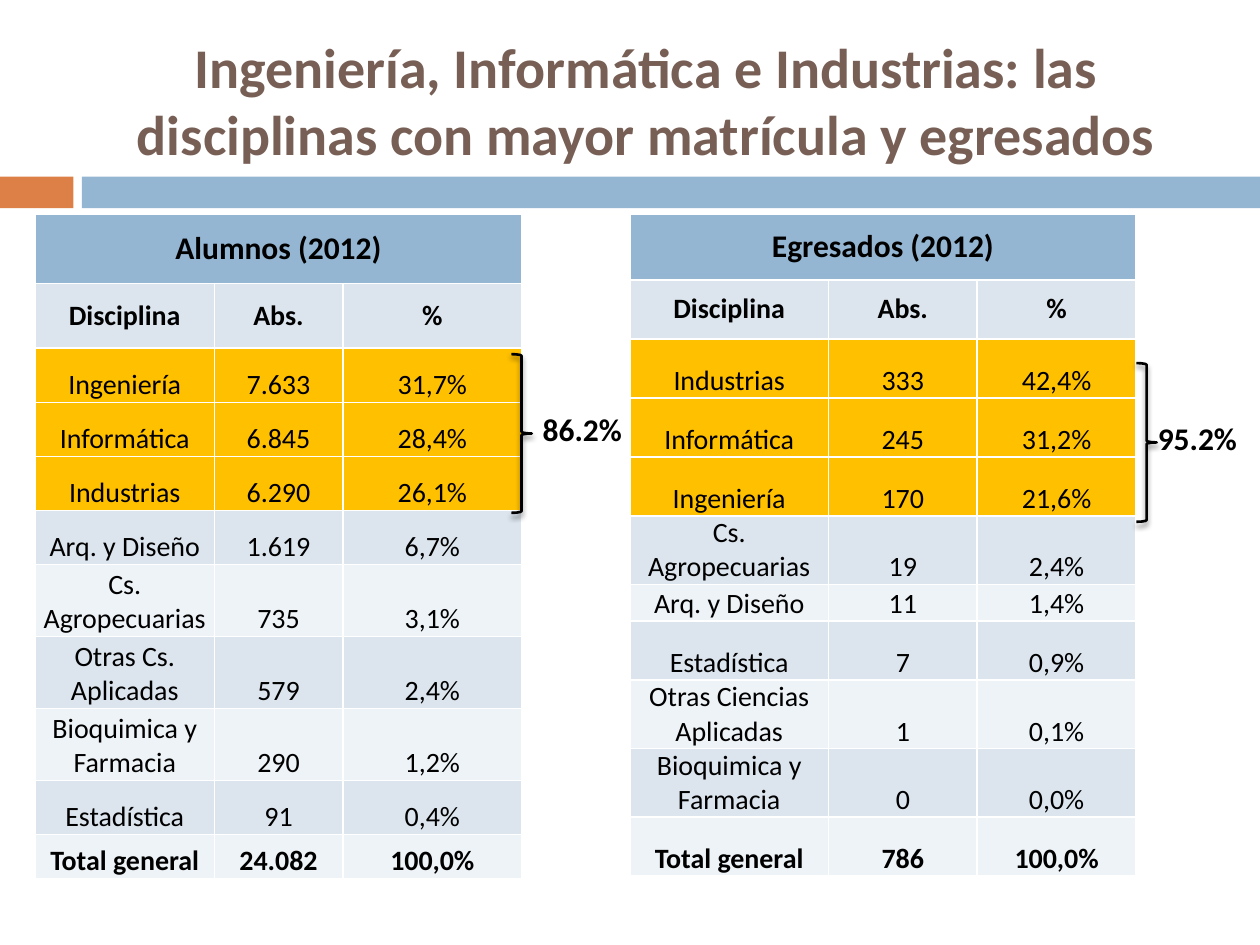
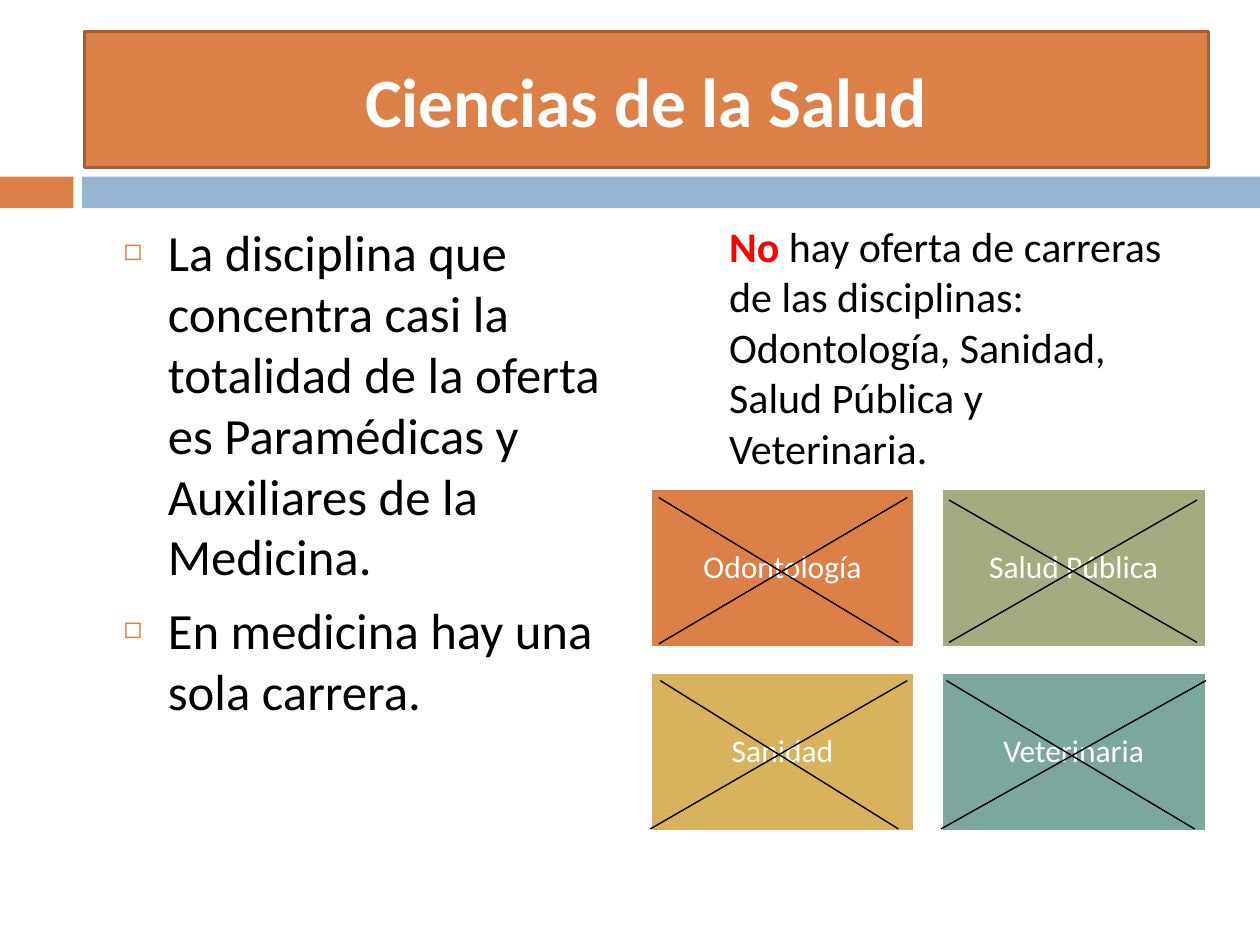
from lxml.etree import SubElement
from pptx import Presentation
from pptx.dml.color import RGBColor
from pptx.enum.shapes import MSO_CONNECTOR as Line, MSO_SHAPE as Shape
from pptx.enum.text import MSO_ANCHOR as Anchor, MSO_AUTO_SIZE as Fit, PP_ALIGN as Align
from pptx.oxml.ns import qn
from pptx.util import Cm, Pt

BLACK = RGBColor(0x00, 0x00, 0x00)
WHITE = RGBColor(0xFF, 0xFF, 0xFF)
RED = RGBColor(0xFF, 0x00, 0x00)
BROWN = RGBColor(0x77, 0x5F, 0x55)
RUST = RGBColor(0xA3, 0x5F, 0x35)
ORANGE = RGBColor(0xDD, 0x80, 0x47)
BLUE = RGBColor(0x94, 0xB6, 0xD2)
PALE = RGBColor(0xDC, 0xE5, 0xEE)
FAINT = RGBColor(0xEE, 0xF3, 0xF7)
AMBER = RGBColor(0xFF, 0xC0, 0x00)
GREEN = RGBColor(0xA5, 0xAB, 0x81)
GOLD = RGBColor(0xD8, 0xB2, 0x5C)
TEAL = RGBColor(0x7B, 0xA7, 0x9D)


def write(para, text, size=18, color=BLACK, bold=False, align=None):
    """Add one formatted run to a paragraph."""
    run = para.add_run()
    run.text = text
    run.font.name = "Calibri"
    run.font.size = Pt(size)
    run.font.bold = bold
    run.font.color.rgb = color
    if align is not None:
        para.alignment = align


def place(shape, left, top, width, height):
    shape.left, shape.top = Cm(left), Cm(top)
    shape.width, shape.height = Cm(width), Cm(height)


prs = Presentation()
prs.slide_width, prs.slide_height = Cm(25.4), Cm(19.05)
first = prs.slides.add_slide(prs.slide_layouts[5])
health = prs.slides.add_slide(prs.slide_layouts[1])

# Bands, kept on the master for every slide
tree = prs.slide_master.shapes.element
for left, width, color in [(0, 1.48, ORANGE), (1.65, 23.75, BLUE)]:
    band = first.shapes.add_shape(Shape.RECTANGLE, Cm(left), Cm(3.56), Cm(width), Cm(0.64))
    band.shadow.inherit = False
    band.fill.solid()
    band.fill.fore_color.rgb = color
    band.line.fill.background()
    tree.insert(2, band.element)

# Titles
for slide, text, size, color in [
    (first, "Ingeniería, Informática e Industrias: las disciplinas con mayor matrícula y egresados",
     32, BROWN),
    (health, "Ciencias de la Salud", 39.6, WHITE),
]:
    title = slide.shapes.title
    place(title, 1.7, 0.64, 22.66, 2.74)
    title.text_frame.auto_size = Fit.NONE
    title.text_frame.vertical_anchor = Anchor.MIDDLE
    write(title.text_frame.paragraphs[0], text, size=size, color=color, bold=True,
          align=Align.CENTER)
title.fill.solid()
title.fill.fore_color.rgb = ORANGE
title.line.color.rgb = RUST
title.line.width = Pt(1.5)

# Slide 1: tables of students and graduates
head = ("Disciplina", "Abs.", "%")
pupils = [
    ("Alumnos (2012)",), head,
    ("Ingeniería", "7.633", "31,7%"),
    ("Informática", "6.845", "28,4%"),
    ("Industrias", "6.290", "26,1%"),
    ("Arq. y Diseño", "1.619", "6,7%"),
    ("Cs. Agropecuarias", "735", "3,1%"),
    ("Otras Cs. Aplicadas", "579", "2,4%"),
    ("Bioquimica y Farmacia", "290", "1,2%"),
    ("Estadística", "91", "0,4%"),
    ("Total general", "24.082", "100,0%"),
]
grads = [
    ("Egresados (2012)",), head,
    ("Industrias", "333", "42,4%"),
    ("Informática", "245", "31,2%"),
    ("Ingeniería", "170", "21,6%"),
    ("Cs. Agropecuarias", "19", "2,4%"),
    ("Arq. y Diseño", "11", "1,4%"),
    ("Estadística", "7", "0,9%"),
    ("Otras Ciencias Aplicadas", "1", "0,1%"),
    ("Bioquimica y Farmacia", "0", "0,0%"),
    ("Total general", "786", "100,0%"),
]
tall = [1.4, 1.3] + [1.09] * 4 + [1.45] * 3 + [1.09, 0.89]
short = [1.32] + [1.19] * 4 + [1.32, 0.74, 1.19, 1.32, 1.32, 1.19]

for left, data, cols, rows in [
    (0.71, pupils, (3.61, 2.59, 3.61), tall),
    (12.7, grads, (4, 3, 3.2), short),
]:
    table = first.shapes.add_table(len(data), 3, Cm(left), Cm(4.32),
                                   Cm(sum(cols)), Cm(sum(rows))).table
    for col, width in zip(table.columns, cols):
        col.width = Cm(width)
    for row, height in zip(table.rows, rows):
        row.height = Cm(height)
    table.cell(0, 0).merge(table.cell(0, 2))
    for r, texts in enumerate(data):
        if r == 0:
            color = BLUE
        elif 2 <= r <= 4:
            color = AMBER
        else:
            color = PALE if r % 2 else FAINT
        for c, text in enumerate(texts):
            cell = table.cell(r, c)
            cell.fill.solid()
            cell.fill.fore_color.rgb = color
            cell.margin_left = cell.margin_right = cell.margin_top = cell.margin_bottom = 0
            cell.vertical_anchor = Anchor.MIDDLE if r < 2 else Anchor.BOTTOM
            write(cell.text_frame.paragraphs[0], text, size=16 if r else 18,
                  bold=r < 2 or r == len(data) - 1, align=Align.CENTER)

# Braces that add up the three leading disciplines
for left, top, start, width, text in [
    (10.31, 7.14, 10.69, 2.59, "86.2%"),
    (22.91, 7.32, 23.09, 2.31, "95.2%"),
]:
    brace = first.shapes.add_shape(Shape.RIGHT_BRACE, Cm(left), Cm(top), Cm(0.41), Cm(3.2))
    brace.fill.background()
    brace.line.color.rgb = BLACK
    brace.line.width = Pt(1.5)
    effect = SubElement(brace.element.spPr, qn("a:effectLst"))
    shade = SubElement(effect, qn("a:outerShdw"), blurRad=str(Pt(3)), dist=str(Pt(2.4)),
                       dir="5400000", rotWithShape="0")
    tint = SubElement(shade, qn("a:srgbClr"), val=str(BLACK))
    SubElement(tint, qn("a:alpha"), val="45000")

    label = first.shapes.add_textbox(Cm(start), Cm(top + 1), Cm(width), Cm(1.02)).text_frame
    label.word_wrap = True
    label.auto_size = Fit.SHAPE_TO_FIT_TEXT
    write(label.paragraphs[0], text, bold=True)

# Slide 2: crossed-out disciplines
cards = [
    ("Odontología", ORANGE),
    ("Salud Pública", GREEN),
    ("Sanidad", GOLD),
    ("Veterinaria", TEAL),
]
for i, (text, color) in enumerate(cards):
    card = health.shapes.add_shape(Shape.RECTANGLE, Cm(13.11 + i % 2 * 5.87),
                                   Cm(9.86 + i // 2 * 3.71), Cm(5.33), Cm(3.2))
    card.shadow.inherit = False
    card.fill.solid()
    card.fill.fore_color.rgb = color
    card.line.color.rgb = WHITE
    card.line.width = Pt(1.5)
    frame = card.text_frame
    frame.word_wrap = True
    frame.vertical_anchor = Anchor.MIDDLE
    frame.margin_left = frame.margin_right = frame.margin_top = frame.margin_bottom = Cm(0.18)
    frame.paragraphs[0].line_spacing = 0.9
    write(frame.paragraphs[0], text, color=WHITE, align=Align.CENTER)

note = health.shapes.add_textbox(Cm(14.45), Cm(4.32), Cm(9.45), Cm(5.38)).text_frame
note.word_wrap = True
note.auto_size = Fit.SHAPE_TO_FIT_TEXT
write(note.paragraphs[0], "No", size=24, color=RED, bold=True)
write(note.paragraphs[0], " hay oferta de carreras de las disciplinas: Odontología, Sanidad, "
      "Salud Pública y Veterinaria.", size=24)

body = health.placeholders[1]
place(body, 2.24, 4.32, 10.8, 12.7)
frame = body.text_frame
frame.auto_size = Fit.NONE
points = [
    "La disciplina que concentra casi la totalidad de la oferta es Paramédicas y "
    "Auxiliares de la Medicina.",
    "En medicina hay una sola carrera.",
]
for i, text in enumerate(points):
    para = frame.add_paragraph() if i else frame.paragraphs[0]
    para.space_before = Pt(7)
    write(para, text, size=29)
    props = para._p.get_or_add_pPr()
    props.set("marL", str(Cm(0.89)))
    props.set("indent", str(-Cm(0.89)))
    tint = SubElement(props, qn("a:buClr"))
    SubElement(tint, qn("a:srgbClr"), val=str(ORANGE))
    SubElement(props, qn("a:buSzPct"), val="60000")
    SubElement(props, qn("a:buChar"), char="◻")

strokes = [
    (13.28, 10.03, 18.11, 12.95), (18.29, 10.03, 13.28, 12.98),
    (19.13, 10.08, 24.13, 12.95), (24.13, 10.08, 19.13, 12.95),
    (13.31, 13.72, 18.11, 16.71), (18.29, 13.72, 13.11, 16.71),
    (19.08, 13.72, 24.08, 16.71), (24.31, 13.72, 18.97, 16.71),
]
for ends in strokes:
    stroke = health.shapes.add_connector(Line.STRAIGHT, *[Cm(n) for n in ends])
    stroke.line.color.rgb = BLACK
    stroke.line.width = Pt(0.79)
    SubElement(stroke.element.spPr, qn("a:effectLst"))

prs.save("out.pptx")
